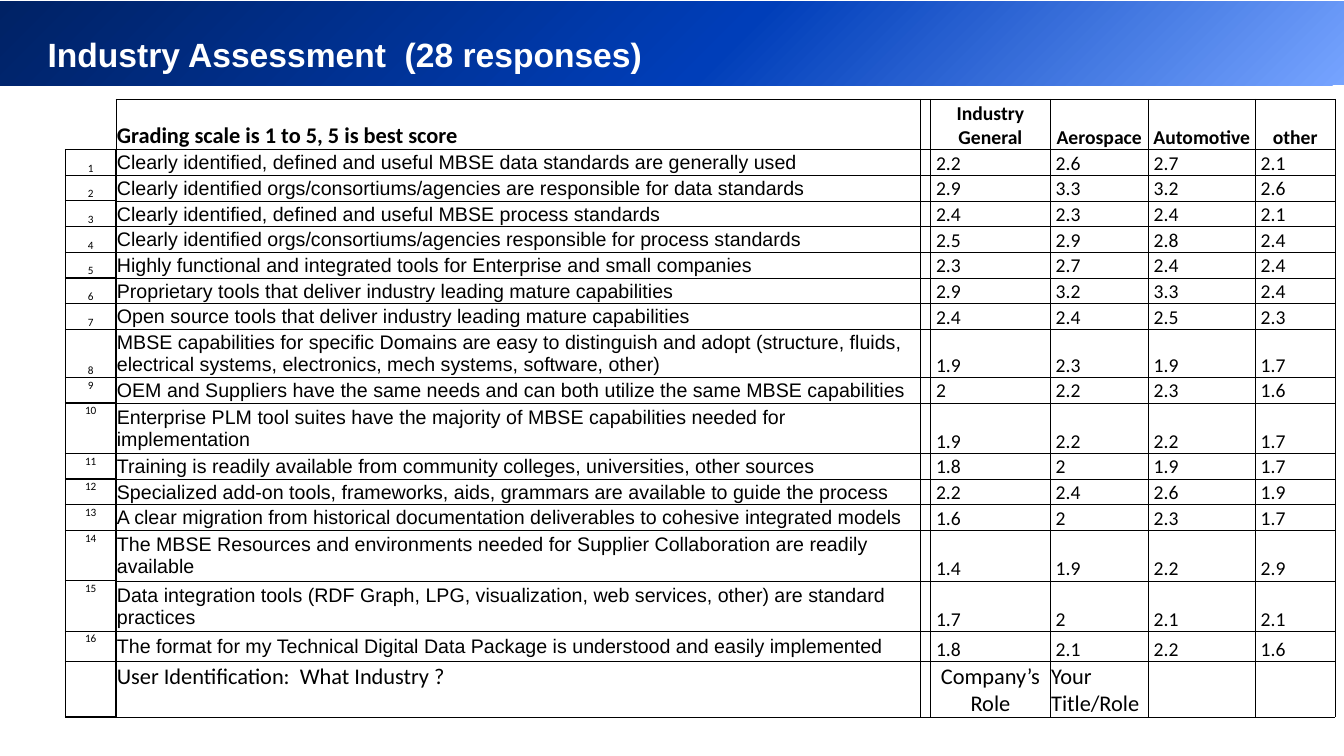
from copy import deepcopy

from lxml import etree
from pptx import Presentation
from pptx import util as u
from pptx.dml.color import RGBColor
from pptx.enum import shapes, text
from pptx.oxml import ns

Pt = u.Pt
WHITE = RGBColor(0xFF, 0xFF, 0xFF)
BLACK = RGBColor(0x00, 0x00, 0x00)
BANNER_STOPS = [
    (0, RGBColor(0x76, 0xA4, 0xFF)),
    (0.46, RGBColor(0x00, 0x3E, 0xB9)),
    (1, RGBColor(0x00, 0x22, 0x65)),
]
LEFT, CENTER = text.PP_ALIGN.LEFT, text.PP_ALIGN.CENTER
TOP, MIDDLE, BOTTOM = text.MSO_ANCHOR.TOP, text.MSO_ANCHOR.MIDDLE, text.MSO_ANCHOR.BOTTOM

HEADINGS = ["", "Grading scale is 1 to 5, 5 is best score", "",
            "Industry General", "Aerospace", "Automotive", "other"]
QUESTIONS = [
    ("Clearly identified, defined and useful MBSE data standards are generally used", 2.2, 2.6, 2.7, 2.1),
    ("Clearly identified orgs/consortiums/agencies are responsible for data standards", 2.9, 3.3, 3.2, 2.6),
    ("Clearly identified, defined and useful MBSE process standards", 2.4, 2.3, 2.4, 2.1),
    ("Clearly identified orgs/consortiums/agencies responsible for process standards", 2.5, 2.9, 2.8, 2.4),
    ("Highly functional and integrated tools for Enterprise and small companies", 2.3, 2.7, 2.4, 2.4),
    ("Proprietary tools that deliver industry leading mature capabilities", 2.9, 3.2, 3.3, 2.4),
    ("Open source tools that deliver industry leading mature capabilities", 2.4, 2.4, 2.5, 2.3),
    ("MBSE capabilities for specific Domains are easy to distinguish and adopt (structure, fluids, "
     "electrical systems, electronics, mech systems, software, other)", 1.9, 2.3, 1.9, 1.7),
    ("OEM and Suppliers have the same needs and can both utilize the same MBSE capabilities", 2, 2.2, 2.3, 1.6),
    ("Enterprise PLM tool suites have the majority of MBSE capabilities needed for implementation",
     1.9, 2.2, 2.2, 1.7),
    ("Training is readily available from community colleges, universities, other sources", 1.8, 2, 1.9, 1.7),
    ("Specialized add-on tools, frameworks, aids, grammars are available to guide the process",
     2.2, 2.4, 2.6, 1.9),
    ("A clear migration from historical documentation deliverables to cohesive integrated models",
     1.6, 2, 2.3, 1.7),
    ("The MBSE Resources and environments needed for Supplier Collaboration are readily available",
     1.4, 1.9, 2.2, 2.9),
    ("Data integration tools (RDF Graph, LPG, visualization, web services, other) are standard practices",
     1.7, 2, 2.1, 2.1),
    ("The format for my Technical Digital Data Package is understood and easily implemented",
     1.8, 2.1, 2.2, 1.6),
]
IDENTIFICATION = ["", "User Identification:  What Industry ?", "",
                  "Company’s Role", "Your Title/Role", "", ""]
COLUMN_WIDTHS = [36, 574.5, 6, 85.5, 70, 76.5, 57]
ROW_HEIGHT = 18.35
TALL_ROWS = {0: 36, 8: 32.2, 10: 36, 14: 36, 15: 36, 16: 21.8, 17: 39.5}


def format_text(paragraph, words, formats):
    run = paragraph.add_run()
    run.text = words
    for name, value in formats.items():
        setattr(run.font, name, value)


def set_borders(cell, widths):
    properties = cell._tc.get_or_add_tcPr()
    for side, width in zip("LRTB", widths):
        line = etree.SubElement(properties, ns.qn(f"a:ln{side}"), w=str(int(Pt(width))))
        if width:
            fill = etree.SubElement(line, ns.qn("a:solidFill"))
            etree.SubElement(fill, ns.qn("a:srgbClr"), val=str(BLACK))
        else:
            etree.SubElement(line, ns.qn("a:noFill"))


presentation = Presentation()
presentation.slide_width, presentation.slide_height = Pt(960), Pt(540)
slide = presentation.slides.add_slide(presentation.slide_layouts[6])

# Gradient banner
banner = slide.shapes.add_shape(shapes.MSO_SHAPE.RECTANGLE, Pt(0), Pt(1), Pt(960), Pt(60))
banner.shadow.inherit = False
banner.line.fill.background()
banner.fill.gradient()
banner.fill.gradient_angle = 135
stop_list = banner._element.spPr.find(".//" + ns.qn("a:gsLst"))
stop_list.append(deepcopy(stop_list[-1]))
for stop, (position, color) in zip(banner.fill.gradient_stops, BANNER_STOPS):
    stop.position = position
    stop.color.rgb = color

# Title
title = slide.shapes.add_textbox(Pt(0), Pt(8.6), Pt(960), Pt(44.6))
title_formats = {"word_wrap": True, "vertical_anchor": MIDDLE, "margin_left": Pt(34),
                 "margin_top": Pt(18), "margin_right": Pt(36), "margin_bottom": Pt(0)}
for name, value in title_formats.items():
    setattr(title.text_frame, name, value)
title_paragraph = title.text_frame.paragraphs[0]
title_paragraph.line_spacing = Pt(26)
format_text(title_paragraph, "Industry Assessment  (28 responses)",
            {"name": "Arial", "size": Pt(24), "bold": True})
title_paragraph.runs[0].font.color.rgb = WHITE

# Table grid
rows = [HEADINGS]
for number, (question, *scores) in enumerate(QUESTIONS, 1):
    rows.append([str(number), question, ""] + [str(score) for score in scores])
rows.append(IDENTIFICATION)
heights = [TALL_ROWS.get(index, ROW_HEIGHT) for index in range(len(rows))]
frame = slide.shapes.add_table(len(rows), len(COLUMN_WIDTHS), Pt(46.8), Pt(70.8),
                               Pt(sum(COLUMN_WIDTHS)), Pt(sum(heights)))
table = frame.table
table.first_row = table.horz_banding = False
for column, width in zip(table.columns, COLUMN_WIDTHS):
    column.width = Pt(width)
for row, height in zip(table.rows, heights):
    row.height = Pt(height)

# Table cells
last = len(rows) - 1
for row_index, row in enumerate(rows):
    for column_index, words in enumerate(row):
        cell = table.cell(row_index, column_index)
        formats = {"name": "Calibri", "size": Pt(14), "bold": False}
        anchor, alignment, indent = BOTTOM, LEFT, 0.7
        if row_index == 0:
            formats["bold"] = True
            if column_index == 1:
                formats["size"] = Pt(16)
            else:
                alignment = CENTER
        elif row_index == last:
            formats["size"] = Pt(16)
            anchor = TOP
            alignment = CENTER if column_index == 3 else LEFT
        elif column_index == 0:
            formats["size"] = Pt(8)
            anchor = BOTTOM if row_index <= 8 else TOP
            alignment = CENTER
        elif column_index == 1:
            formats["name"] = "Arial"
            anchor = MIDDLE
        else:
            indent = 3.9

        if row_index == column_index == 0:
            set_borders(cell, (0, 0.5, 0, 1))
        else:
            set_borders(cell, [1 if column_index == 0 else 0.5] * 4)
        cell.fill.background()
        cell.vertical_anchor = anchor
        cell.margin_left = Pt(indent)
        cell.margin_top = cell.margin_right = Pt(0.7)
        cell.margin_bottom = Pt(0)
        paragraph = cell.text_frame.paragraphs[0]
        paragraph.alignment = alignment
        if words:
            format_text(paragraph, words, formats)
            paragraph.runs[0].font.color.rgb = BLACK
        else:
            # Small type keeps empty cells from stretching their row
            etree.SubElement(paragraph._p, ns.qn("a:endParaRPr"), sz="800")

presentation.save("out.pptx")
